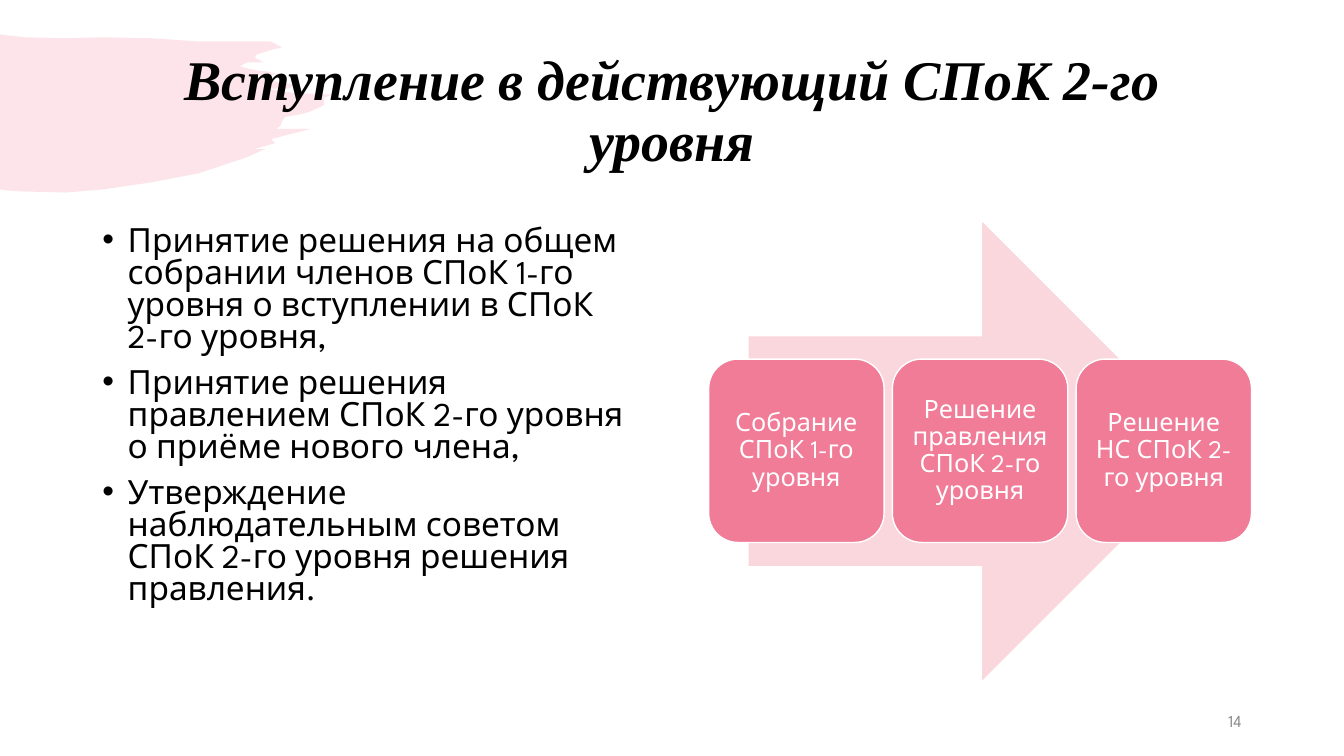
from pptx import Presentation
from pptx.dml.color import RGBColor
from pptx.enum.shapes import MSO_SHAPE
from pptx.enum.text import MSO_ANCHOR, PP_ALIGN
from pptx.util import Cm, Pt
from lxml.etree import SubElement
from pptx.oxml.ns import qn

PINK = RGBColor(0xF0, 0x7C, 0x98)
PALE_PINK = RGBColor(0xF9, 0xD7, 0xDD)
WHITE = RGBColor(0xFF, 0xFF, 0xFF)
BLACK = RGBColor(0, 0, 0)
GRAY = RGBColor(0x8C, 0x8C, 0x8C)
BODY_FONT = "League Spartan"


def paint(shape, color):
    shape.shadow.inherit = False
    shape.fill.solid()
    shape.fill.fore_color.rgb = color
    shape.line.fill.background()


def write(frame, paragraphs, size, color, align, anchor=MSO_ANCHOR.MIDDLE, font=BODY_FONT):
    """Fill a text frame, one paragraph per string, and return its paragraphs."""
    frame.word_wrap = True
    frame.vertical_anchor = anchor
    frame.text = "\n".join(paragraphs)
    for paragraph in frame.paragraphs:
        paragraph.alignment = align
        paragraph.font.name = font
        paragraph.font.size = Pt(size)
        paragraph.font.color.rgb = color
    return frame.paragraphs


presentation = Presentation()
presentation.slide_width = Cm(33.87)
presentation.slide_height = Cm(19.05)
slide = presentation.slides.add_slide(presentation.slide_layouts[6])
shapes = slide.shapes

# Brush stroke outline, in hundredths of an inch
stroke_points = [
    (0, 34), (6, 35), (25, 37), (66, 38), (102, 37), (151, 38), (194, 41), (248, 41),
    (268, 41), (280, 47), (271, 49), (255, 54), (253, 57), (256, 59), (262, 62),
    (245, 62), (238, 66), (246, 68), (256, 70), (266, 71), (275, 74), (251, 75),
    (263, 78), (273, 81), (280, 82), (288, 83), (290, 85), (287, 88), (284, 88),
    (263, 88), (290, 92), (330, 94), (321, 97), (322, 104), (318, 106), (307, 111),
    (300, 113), (283, 116), (280, 120), (278, 125), (274, 128), (308, 128),
    (269, 138), (273, 142), (252, 148), (263, 148), (245, 156), (197, 172),
    (150, 181), (102, 188), (65, 191), (23, 190), (7, 189), (0, 188),
]
outline = shapes.build_freeform(*stroke_points[0], scale=Cm(2.54) / 100)
outline.add_line_segments(stroke_points[1:], close=True)
brush_stroke = outline.convert_to_shape()
paint(brush_stroke, PINK)
stroke_color = brush_stroke.fill._xPr.find(qn("a:solidFill"))[0]
SubElement(stroke_color, qn("a:alpha"), val="20000")

title = shapes.add_textbox(Cm(2.33), Cm(1.01), Cm(29.21), Cm(3.68))
heading = write(title.text_frame, ["Вступление в действующий СПоК 2-го уровня"],
                40, BLACK, PP_ALIGN.CENTER, font="Times New Roman")[0]
heading.line_spacing = 0.9
heading.font.bold = heading.font.italic = True

steps = [
    "Принятие решения на общем собрании членов СПоК 1-го уровня о вступлении в СПоК 2-го уровня,",
    "Принятие решения правлением СПоК 2-го уровня о приёме нового члена,",
    "Утверждение наблюдательным советом СПоК 2-го уровня решения правления.",
]
step_list = shapes.add_textbox(Cm(2.33), Cm(5.59), Cm(13.72), Cm(11.56))
for step in write(step_list.text_frame, steps, 23.8, BLACK, PP_ALIGN.LEFT, MSO_ANCHOR.TOP):
    step.line_spacing = 0.8
    step.space_before = Pt(10)
    properties = step._p.get_or_add_pPr()
    properties.set("marL", str(Cm(0.64)))
    properties.set("indent", str(-Cm(0.64)))
    bullet_font = properties.makeelement(qn("a:buFont"), {"typeface": "Arial"})
    bullet = properties.makeelement(qn("a:buChar"), {"char": "•"})
    properties.find(qn("a:spcBef")).addnext(bullet_font)
    bullet_font.addnext(bullet)

arrow = shapes.add_shape(MSO_SHAPE.RIGHT_ARROW, Cm(18.87), Cm(5.59), Cm(11.66), Cm(11.56))
paint(arrow, PALE_PINK)

stages = ["Собрание СПоК 1-го уровня", "Решение правления СПоК 2-го уровня",
          "Решение НС СПоК 2-го уровня"]
for index, stage in enumerate(stages):
    card = shapes.add_shape(MSO_SHAPE.ROUNDED_RECTANGLE, Cm(17.86 + 4.63 * index), Cm(9.05),
                            Cm(4.42), Cm(4.62))
    paint(card, PINK)
    card.line.color.rgb = WHITE
    card.line.width = Pt(1)
    frame = card.text_frame
    frame.margin_left = frame.margin_right = frame.margin_top = frame.margin_bottom = Cm(0.18)
    write(frame, [stage], 18, WHITE, PP_ALIGN.CENTER)[0].line_spacing = 0.9

page_number = shapes.add_textbox(Cm(23.92), Cm(17.66), Cm(7.62), Cm(1.01))
write(page_number.text_frame, ["14"], 12, GRAY, PP_ALIGN.RIGHT)

presentation.save("out.pptx")
